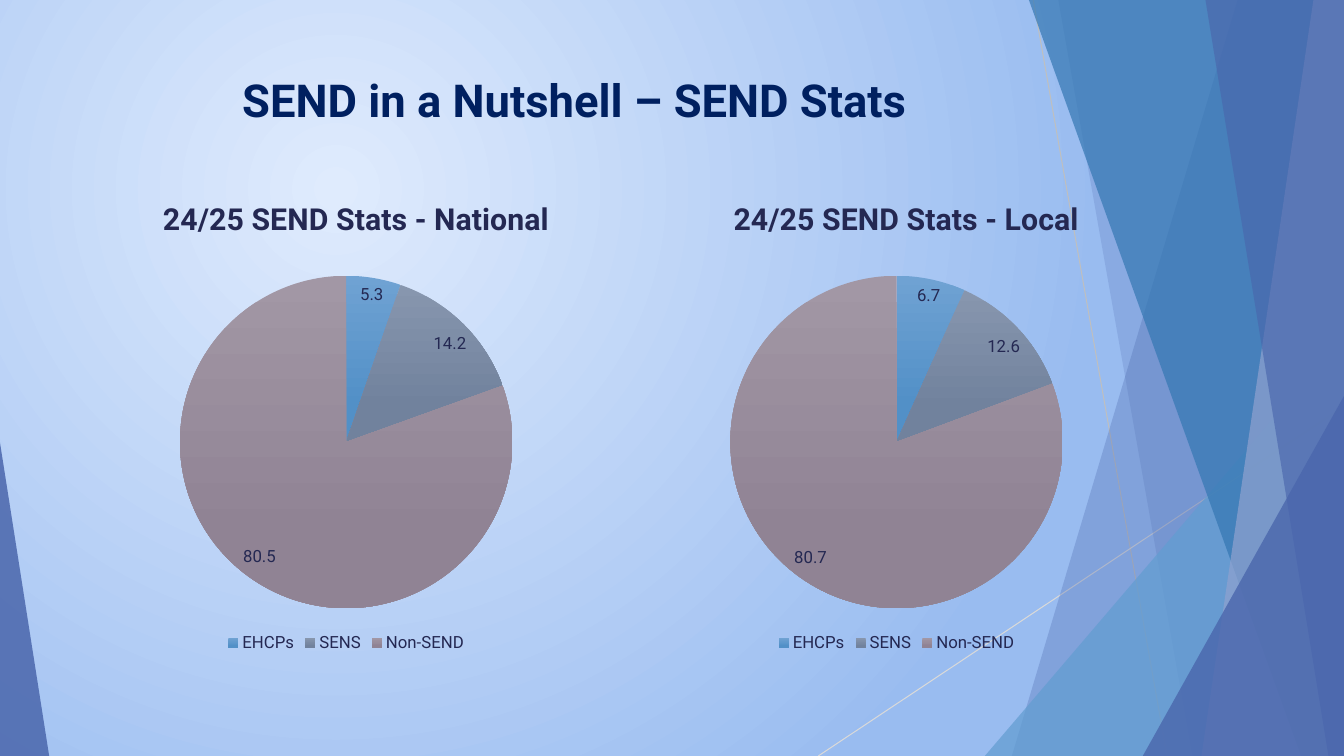
from dataclasses import dataclass

from lxml.etree import SubElement
from pptx import Presentation
from pptx.chart.data import CategoryChartData
from pptx.dml.color import RGBColor
from pptx.dml.fill import FillFormat
from pptx.enum.chart import XL_CHART_TYPE, XL_LABEL_POSITION, XL_LEGEND_POSITION
from pptx.enum.shapes import MSO_CONNECTOR, MSO_SHAPE
from pptx.enum.text import MSO_ANCHOR, MSO_AUTO_SIZE, PP_ALIGN
from pptx.oxml.ns import qn
from pptx.shapes.autoshape import Shape
from pptx.slide import Slide
from pptx.text.text import Font
from pptx.util import Cm, Pt

SLIDE_W, SLIDE_H = 33.87, 19.05


@dataclass(frozen=True)
class Theme:
    font: str = "Roboto"
    heading: str = "002060"
    ink: str = "242852"
    indigo: str = "4A66AC"
    pale_indigo: str = "90A2CF"
    sky: str = "629DD1"
    ocean: str = "3477B2"
    backdrop: tuple[str, str] = ("DFEBFD", "99BCF0")
    slices: tuple[tuple[str, str], ...] = (
        ("6FA2D3", "5290C7"),
        ("8796AE", "71829D"),
        ("A297A5", "908394"),
    )
    heading_size: float = 32.4
    chart_title_size: float = 21.6
    label_size: float = 12


@dataclass(frozen=True)
class Ray:
    start: tuple[float, float]
    end: tuple[float, float]
    color: str


@dataclass(frozen=True)
class Shard:
    top_x: float
    bottom_x: float
    color: str
    opacity: int


@dataclass(frozen=True)
class Peak:
    left: float
    top: float
    right: float
    apex: float
    color: str
    opacity: int


@dataclass(frozen=True)
class StatsPie:
    title: str
    left: float
    title_x: float
    shares: tuple[float, ...]


THEME = Theme()
RAYS = (
    Ray((26.04, 0), (29.41, SLIDE_H), "BFBFBF"),
    Ray((SLIDE_W, 10.24), (20.62, SLIDE_H), "D9D9D9"),
)
FACETS = (
    Shard(31.19, 25.5, THEME.indigo, 30),
    Shard(26.67, 30.05, THEME.indigo, 20),
    Peak(24.82, 8.46, SLIDE_W, 1, THEME.sky, 72),
    Shard(25.93, 32.79, THEME.ocean, 70),
    Shard(33.1, 30.28, THEME.pale_indigo, 70),
    Shard(30.38, 33.48, THEME.indigo, 65),
    Peak(28.8, 9.98, SLIDE_W, 1, THEME.indigo, 80),
    Peak(0, 11.15, 1.24, 0, THEME.indigo, 85),
)
GROUPS = ("EHCPs", "SENS", "Non-SEND")
PIES = (
    StatsPie("24/25 SEND Stats - National", 0.23, 0.22, (5.3, 14.2, 80.5)),
    StatsPie("24/25 SEND Stats - Local", 14.1, 0.25, (6.7, 12.6, 80.7)),
)


def apply(target: object, values: dict[str, object]) -> None:
    for name, value in values.items():
        setattr(target, name, value)


def style_font(font: Font, size: float, color: str, bold: bool = False) -> None:
    apply(font, {"name": THEME.font, "size": Pt(size), "bold": bold})
    font.color.rgb = RGBColor.from_string(color)


def shade(fill: FillFormat, colors: tuple[str, str], last: float = 1) -> None:
    fill.gradient()
    for stop, color, position in zip(fill.gradient_stops, colors, (0, last)):
        stop.color.rgb = RGBColor.from_string(color)
        stop.position = position


def paint_backdrop(slide: Slide) -> None:
    shade(slide.background.fill, THEME.backdrop)
    gradient = slide.element.find(".//" + qn("a:gradFill"))
    gradient.remove(gradient.find(qn("a:lin")))
    circle = SubElement(gradient, qn("a:path"), {"path": "circle"})
    focus = {"l": "50000", "t": "50000", "r": "100000", "b": "100000"}
    SubElement(circle, qn("a:fillToRect"), focus)


def draw_ray(slide: Slide, ray: Ray) -> None:
    ends = [Cm(value) for value in ray.start + ray.end]
    line = slide.shapes.add_connector(MSO_CONNECTOR.STRAIGHT, *ends)
    line.line.width = Pt(0.75)
    line.line.color.rgb = RGBColor.from_string(ray.color)
    SubElement(line.element.spPr, qn("a:effectLst"))


def outline_shard(slide: Slide, shard: Shard) -> Shape:
    corners = [(shard.top_x, 0), (SLIDE_W, 0), (SLIDE_W, SLIDE_H), (shard.bottom_x, SLIDE_H)]
    points = [(Cm(x), Cm(y)) for x, y in corners]
    builder = slide.shapes.build_freeform(*points[0])
    builder.add_line_segments(points[1:], close=True)
    return builder.convert_to_shape()


def outline_peak(slide: Slide, peak: Peak) -> Shape:
    triangle = slide.shapes.add_shape(
        MSO_SHAPE.ISOSCELES_TRIANGLE,
        Cm(peak.left), Cm(peak.top), Cm(peak.right - peak.left), Cm(SLIDE_H - peak.top),
    )
    triangle.adjustments[0] = peak.apex
    return triangle


def draw_facet(slide: Slide, facet: Shard | Peak) -> None:
    outline = outline_shard if isinstance(facet, Shard) else outline_peak
    shape = outline(slide, facet)
    shape.shadow.inherit = False
    shape.line.fill.background()
    shape.fill.solid()
    shape.fill.fore_color.rgb = RGBColor.from_string(facet.color)
    tint = shape.element.spPr.find(qn("a:solidFill"))[0]
    SubElement(tint, qn("a:alpha"), {"val": str(facet.opacity * 1000)})


def write_heading(slide: Slide, text: str) -> None:
    heading = slide.shapes.title
    apply(heading, {"left": Cm(5.38), "top": Cm(1.6), "width": Cm(18.19), "height": Cm(2.08)})
    frame = heading.text_frame
    frame.text = text
    apply(frame, {
        "word_wrap": True,
        "auto_size": MSO_AUTO_SIZE.NONE,
        "vertical_anchor": MSO_ANCHOR.TOP,
        "margin_top": Cm(0.22),
    })
    paragraph = frame.paragraphs[0]
    paragraph.alignment = PP_ALIGN.CENTER
    style_font(paragraph.runs[0].font, THEME.heading_size, THEME.heading, True)


def place(part: object, index: int, settings: dict[str, object]) -> None:
    for old in part.findall(qn("c:layout")):
        part.remove(old)
    layout = SubElement(part, qn("c:layout"))
    manual = SubElement(layout, qn("c:manualLayout"))
    for name, value in settings.items():
        SubElement(manual, qn(f"c:{name}"), {"val": str(value)})
    part.insert(index, layout)


def draw_pie(slide: Slide, pie: StatsPie) -> None:
    data = CategoryChartData()
    data.categories = GROUPS
    data.add_series("Series 1", pie.shares)
    chart = slide.shapes.add_chart(
        XL_CHART_TYPE.PIE, Cm(pie.left), Cm(4.24), Cm(16.99), Cm(12.32), data
    ).chart
    style_font(chart.font, THEME.label_size, THEME.ink)

    title = chart.chart_title
    title.text_frame.text = pie.title
    title.include_in_layout = False
    style_font(title.text_frame.paragraphs[0].runs[0].font, THEME.chart_title_size, THEME.ink, True)
    edges = {"xMode": "edge", "yMode": "edge"}
    place(title.element if hasattr(title, "element") else chart.element.find(".//" + qn("c:title")),
          1, edges | {"x": pie.title_x, "y": 0.05})
    place(chart.element.find(".//" + qn("c:plotArea")), 0,
          {"layoutTarget": "inner"} | edges | {"x": 0.25, "y": 0.22, "w": 0.5, "h": 0.68})

    chart.has_legend = True
    apply(chart.legend, {"position": XL_LEGEND_POSITION.BOTTOM, "include_in_layout": False})
    style_font(chart.legend.font, THEME.label_size, THEME.ink)

    plot = chart.plots[0]
    apply(plot, {"vary_by_categories": True, "has_data_labels": True})
    apply(plot.data_labels, {
        "show_value": True, "show_percentage": False, "position": XL_LABEL_POSITION.BEST_FIT,
    })
    style_font(plot.data_labels.font, THEME.label_size, THEME.ink)
    for index, colors in enumerate(THEME.slices):
        slice_fill = plot.series[0].points[index].format.fill
        shade(slice_fill, colors, 0.78)
        slice_fill.gradient_angle = 270


def main() -> None:
    deck = Presentation()
    apply(deck, {"slide_width": Cm(SLIDE_W), "slide_height": Cm(SLIDE_H)})
    slide = deck.slides.add_slide(deck.slide_layouts[5])
    paint_backdrop(slide)
    for ray in RAYS:
        draw_ray(slide, ray)
    for facet in FACETS:
        draw_facet(slide, facet)
    write_heading(slide, "SEND in a Nutshell – SEND Stats")
    for pie in PIES:
        draw_pie(slide, pie)
    deck.save("out.pptx")


if __name__ == "__main__":
    main()
